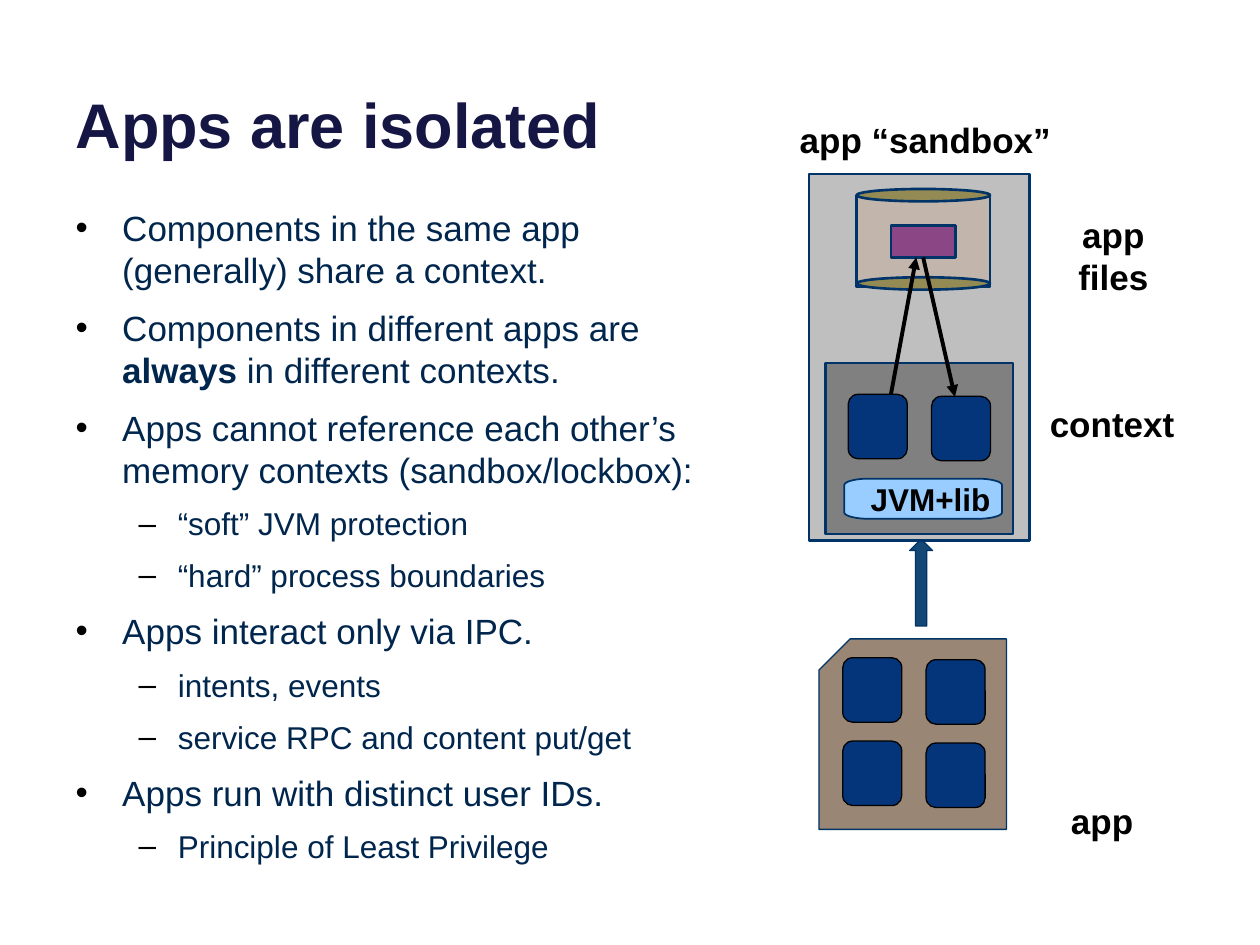
import math

from lxml import etree
from pptx import Presentation
from pptx.dml.color import RGBColor
from pptx.enum import shapes, text
from pptx.oxml.ns import qn
from pptx.util import Cm, Pt

FONT = "Arial"
COLORS = {
    "title": "161645", "body": "00264D", "black": "000000", "outline": "003367",
    "package": "998674", "component": "04357B", "arrow": "134776",
    "sandbox": "BFBFBF", "context": "808080", "runtime": "99CCFF",
    "store": "C2B6AC", "store_cap": "948A54", "file": "8B4785",
}

TITLE = "Apps are isolated"
# (level, text); the text between asterisks is bold
BULLETS = [
    (0, "Components in the same app (generally) share a context."),
    (0, "Components in different apps are *always* in different contexts."),
    (0, "Apps cannot reference each other’s memory contexts (sandbox/lockbox):"),
    (1, "“soft” JVM protection"),
    (1, "“hard” process boundaries"),
    (0, "Apps interact only via IPC."),
    (1, "intents, events"),
    (1, "service RPC and content put/get"),
    (0, "Apps run with distinct user IDs."),
    (1, "Principle of Least Privilege"),
]
# Per level: size, space before, left margin, hanging indent, bullet
LEVELS = [(20, 9, 0.94, 0.94, "•"), (18, 8, 2.06, 0.79, "–")]

# text, (left, top, width, height) in cm, size, alignment
LEFT, CENTER = text.PP_ALIGN.LEFT, text.PP_ALIGN.CENTER
LABELS = [
    ("app", (21.34, 16, 2.16, 1.12), 20, LEFT),
    ("app “sandbox”", (15.72, 2.26, 5.87, 1.12), 20, CENTER),
    ("context", (20.73, 7.98, 3.38, 1.12), 20, CENTER),
    ("app files", (20.96, 4.17, 2.97, 1.98), 20, CENTER),
    ("JVM+lib", (17.3, 9.55, 4.5, 1.04), 18, LEFT),
]

COMPONENT_SIZE = (1.19, 1.3)
PITCH = 1.68       # between neighbouring components
COLUMN_DROP = 0.04  # the right column sits slightly lower


def rgb(name):
    return RGBColor.from_string(COLORS[name])


def style_run(span, size, color, bold):
    span.font.name = FONT
    span.font.size = Pt(size)
    span.font.bold = bold
    span.font.color.rgb = rgb(color)


def place(shape, box):
    shape.left, shape.top, shape.width, shape.height = map(Cm, box)


def paint(shape, fill, line="outline", weight=1.5):
    shape.shadow.inherit = False
    shape.fill.solid()
    shape.fill.fore_color.rgb = rgb(fill)
    shape.line.color.rgb = rgb(line)
    shape.line.width = Pt(weight)
    return shape


def add_box(page, kind, box, fill, line="outline", weight=1.5):
    shape = page.shapes.add_shape(kind, *map(Cm, box))
    return paint(shape, fill, line, weight)


def add_components(page, left, top, rows):
    for row in range(rows):
        for column in range(2):
            x = left + column * PITCH
            y = top + row * PITCH + column * COLUMN_DROP
            add_box(page, shapes.MSO_SHAPE.ROUNDED_RECTANGLE,
                    (x, y, *COMPONENT_SIZE), "component", "black", 0.75)


def add_flat_pill(page, box, radius_x, radius_y, fill):
    """Rectangle with elliptical corners, drawn clockwise from the right."""
    left, top, width, height = box
    points = []
    for quarter, (side_x, side_y) in enumerate([(1, 1), (-1, 1), (-1, -1), (1, -1)]):
        center_x = left + width / 2 + side_x * (width / 2 - radius_x)
        center_y = top + height / 2 + side_y * (height / 2 - radius_y)
        for step in range(9):
            angle = math.radians(quarter * 90 + step * 11.25)
            points.append((Cm(center_x + radius_x * math.cos(angle)),
                           Cm(center_y + radius_y * math.sin(angle))))
    builder = page.shapes.build_freeform(*points[0])
    builder.add_line_segments(points[1:], close=True)
    return paint(builder.convert_to_shape(), fill, weight=1)


def add_arrow(page, start, end):
    arrow = page.shapes.add_connector(
        shapes.MSO_CONNECTOR.STRAIGHT, *map(Cm, start + end))
    arrow.line.color.rgb = rgb("black")
    arrow.line.width = Pt(2.25)
    etree.SubElement(arrow.line._get_or_add_ln(), qn("a:tailEnd"), type="triangle")
    etree.SubElement(arrow._element.spPr, qn("a:effectLst"))
    return arrow


def add_title(page):
    title = page.shapes.title
    place(title, (1.27, -0.94, 22.86, 4.32))
    frame = title.text_frame
    frame.text = TITLE
    frame.auto_size = text.MSO_AUTO_SIZE.NONE
    frame.vertical_anchor = text.MSO_ANCHOR.BOTTOM
    para = frame.paragraphs[0]
    para.alignment = LEFT
    style_run(para.runs[0], 36, "title", True)


def add_bullets(page):
    body = page.placeholders[1]
    place(body, (1.27, 4.04, 13.23, 11.43))
    frame = body.text_frame
    frame.auto_size = text.MSO_AUTO_SIZE.NONE
    for index, (level, words) in enumerate(BULLETS):
        size, before, margin, hanging, mark = LEVELS[level]
        para = frame.paragraphs[0] if index == 0 else frame.add_paragraph()
        para.level = level
        para.space_before = Pt(before)
        for part, piece in enumerate(words.split("*")):
            span = para.add_run()
            span.text = piece
            style_run(span, size, "body", part % 2 == 1)
        props = para._p.get_or_add_pPr()
        props.set("marL", str(Cm(margin)))
        props.set("indent", str(-Cm(hanging)))
        color = etree.SubElement(props, qn("a:buClr"))
        etree.SubElement(color, qn("a:srgbClr"), val=COLORS["black"])
        etree.SubElement(props, qn("a:buChar"), char=mark)


def add_diagram(page):
    kinds = shapes.MSO_SHAPE
    # App package and its components
    package = add_box(page, kinds.SNIP_1_RECTANGLE, (16.51, 12.88, 3.78, 3.84),
                      "package", weight=0.75)
    package._element.spPr.xfrm.set("flipH", "1")
    add_components(page, 16.99, 13.26, rows=2)
    add_box(page, kinds.UP_ARROW, (18.34, 10.87, 0.46, 1.75), "arrow", weight=0.75)

    # Sandbox with the running context
    add_box(page, kinds.RECTANGLE, (16.31, 3.51, 4.45, 7.39), "sandbox")
    add_box(page, kinds.RECTANGLE, (16.64, 7.32, 3.78, 3.45), "context")
    add_flat_pill(page, (17.02, 9.65, 3.18, 0.81), 0.5, 0.13, "runtime")
    add_components(page, 17.1, 7.95, rows=1)

    # File store
    add_box(page, kinds.RECTANGLE, (17.27, 3.94, 2.69, 1.85), "store")
    for top in (3.81, 5.59):
        add_box(page, kinds.OVAL, (17.27, top, 2.69, 0.25), "store_cap")
    file = add_box(page, kinds.RECTANGLE, (17.96, 4.55, 1.3, 0.64), "file")

    # Reads and writes
    read = add_arrow(page, (18.61, 5.19), (19.25, 8))
    read.begin_connect(file, 2)
    add_arrow(page, (17.96, 7.95), (18.47, 5.19))


def add_labels(page):
    for words, box, size, alignment in LABELS:
        frame = page.shapes.add_textbox(*map(Cm, box)).text_frame
        frame.word_wrap = True
        frame.auto_size = text.MSO_AUTO_SIZE.SHAPE_TO_FIT_TEXT
        frame.text = words
        para = frame.paragraphs[0]
        para.alignment = alignment
        style_run(para.runs[0], size, "black", True)


def main():
    deck = Presentation()
    deck.slide_width, deck.slide_height = Cm(25.4), Cm(19.05)
    page = deck.slides.add_slide(deck.slide_layouts[1])
    add_title(page)
    add_bullets(page)
    add_diagram(page)
    add_labels(page)
    deck.save("out.pptx")


if __name__ == "__main__":
    main()
